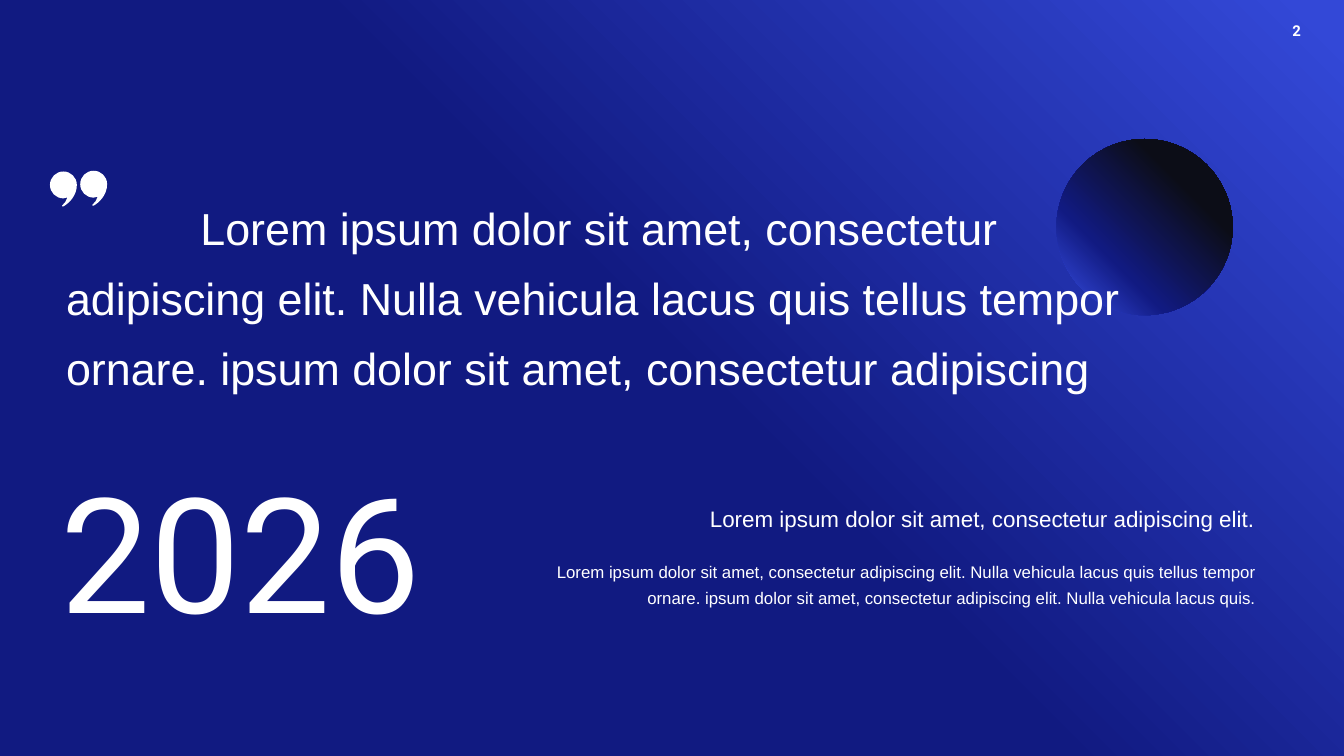
from lxml.etree import SubElement
from pptx import Presentation
from pptx.dml.color import RGBColor
from pptx.enum.shapes import MSO_SHAPE
from pptx.enum.text import MSO_AUTO_SIZE, PP_ALIGN
from pptx.oxml.ns import qn
from pptx.util import Pt

WHITE = "FFFFFF"
LEFT, RIGHT = PP_ALIGN.LEFT, PP_ALIGN.RIGHT

BACKDROP_STOPS = [(0, "111A81"), (51, "111A81"), (98, "3348D7"), (100, "3348D7")]
MOON_STOPS = [(0, "3348D7"), (6, "3348D7"), (32, "111A81"), (73, "0C0D17"), (100, "0C0D17")]
MOON_BOX = (566, 74.5, 94.4, 94.4)

PAGE_NUMBER = ("2", (686.9, 9, 20.2, 15.1), "Roboto", 8, True, LEFT, 1)
QUOTE = (
    "\tLorem ipsum dolor sit amet, consectetur adipiscing elit. Nulla vehicula lacus quis "
    "tellus tempor ornare. ipsum dolor sit amet, consectetur adipiscing",
    (30, 96.2, 607.7, 118.8), "Arial", 24, False, LEFT, 1.3)
DETAIL = (
    "Lorem ipsum dolor sit amet, consectetur adipiscing elit. Nulla vehicula lacus quis "
    "tellus tempor ornare. ipsum dolor sit amet, consectetur adipiscing elit. "
    "Nulla vehicula lacus quis.",
    (279.6, 294.9, 398.2, 32.4), "Arial", 9, False, RIGHT, 1.3)
YEAR = ("2026", (26.8, 239.8, 248.4, 110.2), "Roboto", 86, False, LEFT, 1)
SUBHEADING = ("Lorem ipsum dolor sit amet, consectetur adipiscing elit.",
              (360.3, 267.8, 317.5, 20.2), "Arial", 12, False, RIGHT, 1)
TAB_STOP = 72

MARK_ORIGINS = [(26.8, 91.9), (43, 91.5)]
MARK_START = (14.4, 7.2)
MARK_CURVES = [
    ((14.4, 13), (10.2, 17), (7.2, 18.7)),
    ((6.8, 19), (6.2, 18.6), (6.6, 18.2)),
    ((7.9, 17.2), (8.8, 15.5), (9.4, 13.9)),
    ((8.6, 14.3), (7.9, 14.4), (7.2, 14.4)),
    ((3.2, 14.4), (0, 11.2), (0, 7.2)),
    ((0, 3.2), (3.2, 0), (7.2, 0)),
    ((11.2, 0), (14.4, 3.2), (14.4, 7.2)),
]


def color(value):
    return RGBColor.from_string(value)


def set_gradient(fill, owner, stops):
    fill.gradient()
    fill.gradient_angle = 45
    stop_list = owner.xpath(".//a:gsLst")[0]
    for old_stop in list(stop_list):
        stop_list.remove(old_stop)
    for percent, value in stops:
        stop = SubElement(stop_list, qn("a:gs"), pos=str(percent * 1000))
        SubElement(stop, qn("a:srgbClr"), val=value)


def add_text(slide, wording, box, font_name, size, bold, align, spacing):
    frame = slide.shapes.add_textbox(*map(Pt, box)).text_frame
    frame.word_wrap = True
    frame.auto_size = MSO_AUTO_SIZE.SHAPE_TO_FIT_TEXT
    frame.margin_left = frame.margin_right = Pt(5.4)
    frame.margin_top = frame.margin_bottom = Pt(2.7)
    paragraph = frame.paragraphs[0]
    paragraph.text = wording
    paragraph.alignment = align
    paragraph.line_spacing = float(spacing)
    if wording.startswith("\t"):
        properties = paragraph.runs[0].font._element.xpath("../../a:pPr")[0]
        tabs = SubElement(properties, qn("a:tabLst"))
        SubElement(tabs, qn("a:tab"), pos=str(Pt(TAB_STOP)), algn="l")
    for run in paragraph.runs:
        run.font.name = font_name
        run.font.size = Pt(size)
        run.font.bold = bold
        run.font.color.rgb = color(WHITE)


def bend_segments(mark):
    segments = mark.element.xpath(".//a:lnTo")
    for segment, curve in zip(segments, MARK_CURVES):
        bend = SubElement(segment.getparent(), qn("a:cubicBezTo"))
        for x, y in curve:
            SubElement(bend, qn("a:pt"), x=str(Pt(x)), y=str(Pt(y)))
        segment.getparent().replace(segment, bend)


def add_quote_marks(slide):
    marks = slide.shapes.add_group_shape()
    corners = [MARK_START] + [curve[-1] for curve in MARK_CURVES]
    for left, top in MARK_ORIGINS:
        points = [(Pt(left + x), Pt(top + y)) for x, y in corners]
        builder = marks.shapes.build_freeform(*points[0])
        builder.add_line_segments(points[1:], close=True)
        mark = builder.convert_to_shape()
        bend_segments(mark)
        mark.shadow.inherit = False
        mark.fill.solid()
        mark.fill.fore_color.rgb = color(WHITE)
        mark.line.fill.background()


def main():
    deck = Presentation()
    deck.slide_width, deck.slide_height = Pt(720), Pt(405)
    slide = deck.slides.add_slide(deck.slide_layouts[6])
    set_gradient(slide.background.fill, slide.element, BACKDROP_STOPS)

    add_text(slide, *PAGE_NUMBER)
    moon = slide.shapes.add_shape(MSO_SHAPE.OVAL, *map(Pt, MOON_BOX))
    moon.shadow.inherit = False
    moon.line.fill.background()
    set_gradient(moon.fill, moon.element, MOON_STOPS)

    for content in (QUOTE, DETAIL, YEAR):
        add_text(slide, *content)
    add_quote_marks(slide)
    add_text(slide, *SUBHEADING)
    deck.save("out.pptx")


if __name__ == "__main__":
    main()
